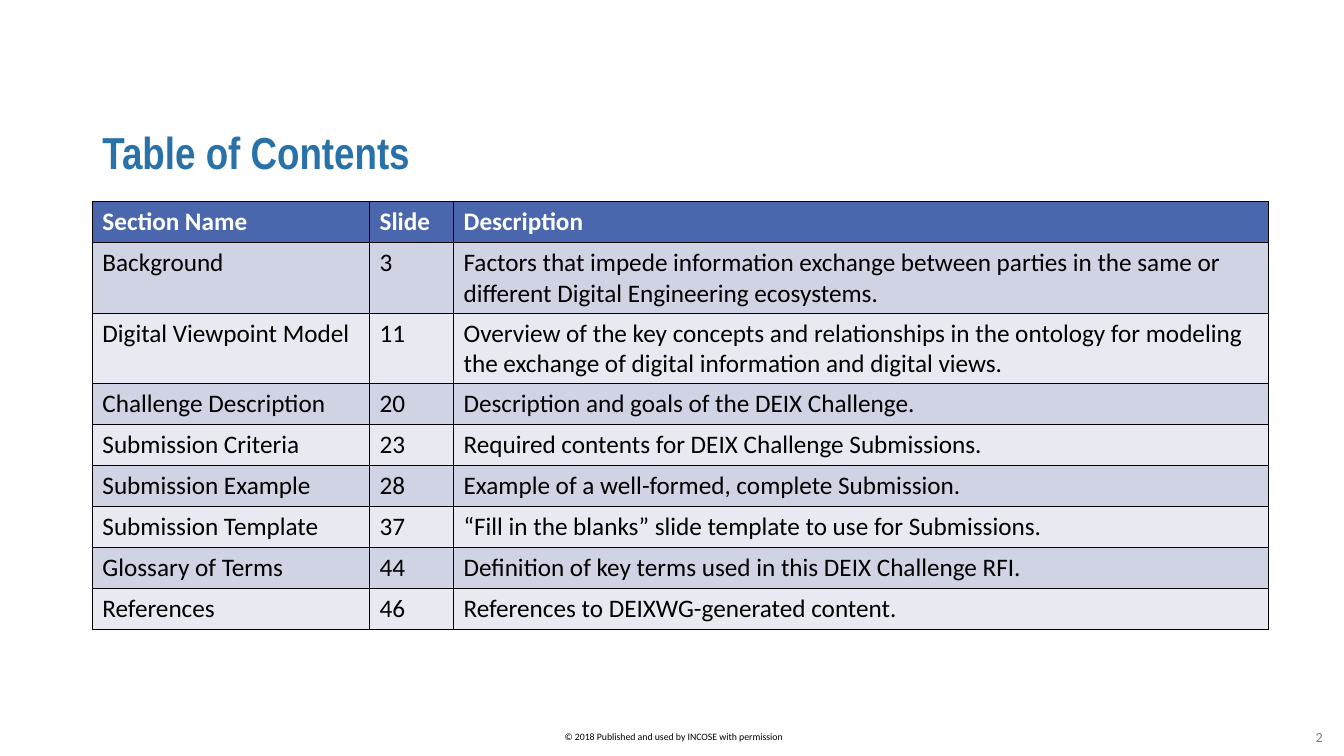
from lxml.etree import SubElement
from pptx import Presentation
from pptx.dml.color import RGBColor
from pptx.enum.text import MSO_ANCHOR, PP_ALIGN
from pptx.oxml.ns import qn
from pptx.util import Inches, Pt

CONTENTS = [
    ("Section Name", "Slide", "Description"),
    ("Background", "3", "Factors that impede information exchange between parties "
     "in the same or different Digital Engineering ecosystems."),
    ("Digital Viewpoint Model", "11", "Overview of the key concepts and relationships "
     "in the ontology for modeling the exchange of digital information and digital views."),
    ("Challenge Description", "20", "Description and goals of the DEIX Challenge."),
    ("Submission Criteria", "23", "Required contents for DEIX Challenge Submissions."),
    ("Submission Example", "28", "Example of a well-formed, complete Submission."),
    ("Submission Template", "37",
     "“Fill in the blanks” slide template to use for Submissions."),
    ("Glossary of Terms", "44", "Definition of key terms used in this DEIX Challenge RFI."),
    ("References", "46", "References to DEIXWG-generated content."),
]


def color(hex_code):
    return RGBColor.from_string(hex_code)


def grid(units):
    """Length of grid units; the slide is 160 columns by 90 rows."""
    return Inches(units / 12)


class ContentsSlide:
    body_font = "Calibri"
    title_font = "Arial Narrow"
    black, white, gray, title_blue = "000000", "FFFFFF", "808080", "2971A9"
    header_fill = "4A66AC"
    band_fills = ("E9EAF1", "D0D3E3")

    def __init__(self, deck):
        self.slide = deck.slides.add_slide(deck.slide_layouts[6])

    def set_font(self, paragraph, size, hex_code, name=None, bold=False):
        font = paragraph.font
        font.name, font.size, font.bold = name or self.body_font, Pt(size), bold
        font.color.rgb = color(hex_code)

    def add_text(self, words, box, size, hex_code, name=None, bold=False,
                 align=PP_ALIGN.CENTER, anchor=MSO_ANCHOR.MIDDLE, spacing=None):
        frame = self.slide.shapes.add_textbox(*map(grid, box)).text_frame
        frame.word_wrap = True
        frame.vertical_anchor = anchor
        paragraph = frame.paragraphs[0]
        paragraph.text = words
        paragraph.alignment = align
        paragraph.line_spacing = spacing
        self.set_font(paragraph, size, hex_code, name, bold)

    def add_borders(self, cell):
        """Draw all four edges; they must precede the fill in the cell's XML."""
        properties = cell._tc.get_or_add_tcPr()
        for edge in ("a:lnL", "a:lnR", "a:lnT", "a:lnB"):
            line = SubElement(properties, qn(edge), w=str(Pt(1)))
            fill = SubElement(line, qn("a:solidFill"))
            SubElement(fill, qn("a:srgbClr"), val=self.black)

    def add_table(self, rows, left, top, widths, row_height):
        table = self.slide.shapes.add_table(
            len(rows), len(widths), grid(left), grid(top),
            grid(sum(widths)), grid(row_height * len(rows))).table
        for column, width in zip(table.columns, widths):
            column.width = grid(width)
        for r, entries in enumerate(rows):
            header = r == 0
            for c, words in enumerate(entries):
                cell = table.cell(r, c)
                cell.text = words
                self.set_font(cell.text_frame.paragraphs[0], 18,
                              self.white if header else self.black, bold=header)
                self.add_borders(cell)
                cell.fill.solid()
                cell.fill.fore_color.rgb = color(
                    self.header_fill if header else self.band_fills[r % 2])


def main():
    deck = Presentation()
    deck.slide_width, deck.slide_height = grid(160), grid(90)
    page = ContentsSlide(deck)
    page.add_text("© 2018 Published and used by INCOSE with permission",
                  (57.7, 86.4, 45, 2.6), 7, page.black, anchor=MSO_ANCHOR.TOP)
    page.add_text("Table of Contents", (11, 14, 140, 9), 32, page.title_blue,
                  page.title_font, bold=True, align=PP_ALIGN.LEFT, spacing=0.9)
    page.add_table(CONTENTS, 11, 24, (33, 10, 97), 4.88)
    page.add_text("2", (154, 85.3, 6.1, 4.8), 10, page.gray)
    deck.save("out.pptx")


if __name__ == "__main__":
    main()
